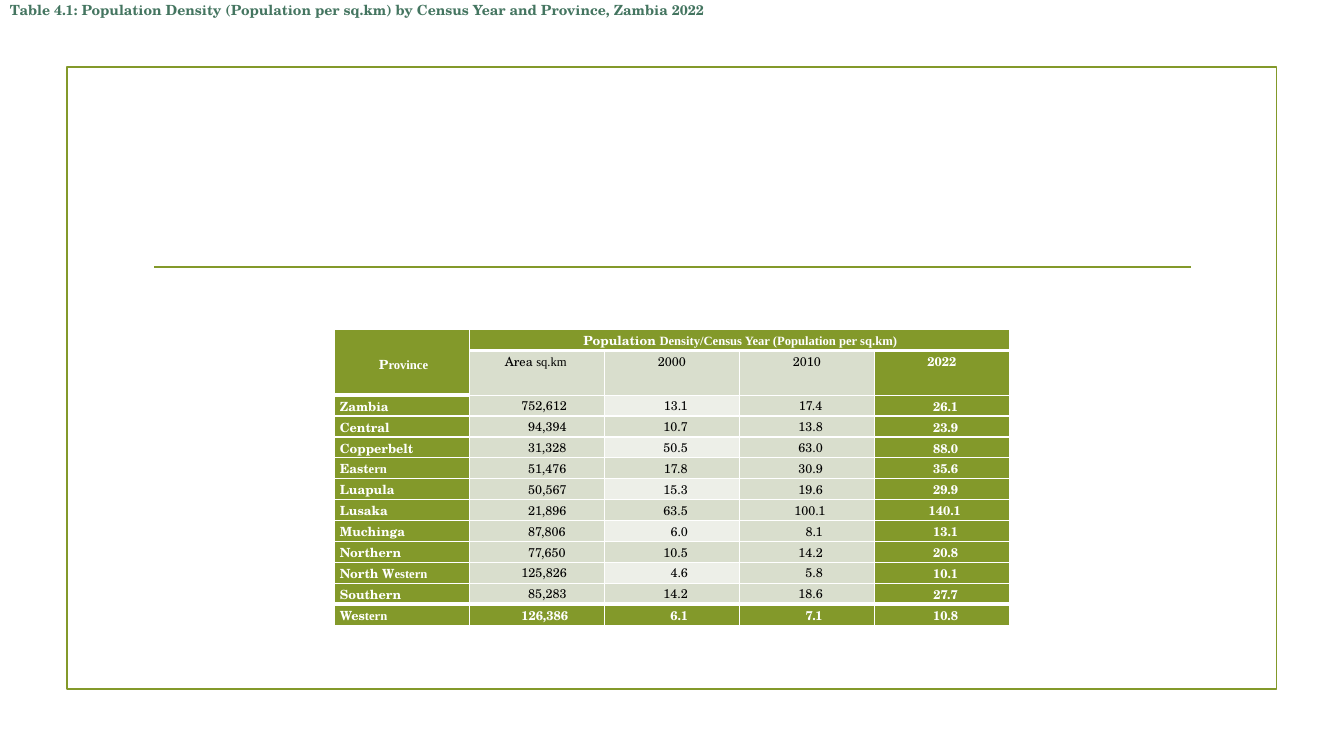
import pptx
import pptx.dml.color
import pptx.enum.shapes
import pptx.enum.text
import pptx.oxml
import pptx.oxml.ns
import pptx.util

Pt = pptx.util.Pt
COLORS = {"olive": "83992A", "sage": "D9DECD", "pale": "EDEFE8",
          "white": "FFFFFF", "black": "000000", "title": "447560"}
SERIF, TIMES = "TeX Gyre Schola", "Times New Roman"
CENTER = pptx.enum.text.PP_ALIGN.CENTER
LEFT = pptx.enum.text.PP_ALIGN.LEFT

HEADINGS = ["Area |sq.km", "2000", "2010", "2022"]
DENSITIES = [
    ["Zambia", "752,612", "13.1", "17.4", "26.1"],
    ["Central", "94,394", "10.7", "13.8", "23.9"],
    ["Copperbelt", "31,328", "50.5", "63.0", "88.0"],
    ["East|ern", "51,476", "17.8", "30.9", "35.6"],
    ["Luapula", "50,567", "15.3", "19.6", "29.9"],
    ["Lusaka", "21,896", "63.5", "100.1", "140.1"],
    ["Muchinga", "87,806", "6.0", "8.1", "13.1"],
    ["Northern", "77,650", "10.5", "14.2", "20.8"],
    ["North W|estern", "125,826", "4.6", "5.8", "10.1"],
    ["Southern", "85,283", "14.2", "18.6", "27.7"],
    ["Wes|tern", "126,386", "6.1", "7.1", "10.8"],
]
INDENT_BY_LENGTH = {3: 46, 4: 41, 5: 36.7, 6: 41.8, 7: 37}


class DensitySlide:
    """Holds the slide and its style, and draws each kind of element."""

    def __init__(self, deck):
        self.slide = deck.slides.add_slide(deck.slide_layouts[6])

    def color(self, name):
        return pptx.dml.color.RGBColor.from_string(COLORS[name])

    def style(self, font, size, color, bold):
        font.size, font.bold = Pt(size), bold
        font.color.rgb = self.color(color)

    def frame(self, left, top, width, height):
        border = self.slide.shapes.add_shape(
            pptx.enum.shapes.MSO_SHAPE.RECTANGLE,
            Pt(left), Pt(top), Pt(width), Pt(height))
        border.shadow.inherit = False
        border.fill.background()
        border.line.color.rgb = self.color("olive")
        border.line.width = Pt(1.25)

    def rule(self, left, right, y):
        divider = self.slide.shapes.add_connector(
            pptx.enum.shapes.MSO_CONNECTOR.STRAIGHT,
            Pt(left), Pt(y), Pt(right), Pt(y))
        divider.line.color.rgb = self.color("olive")
        divider.line.width = Pt(1.25)
        divider._element.spPr.append(
            pptx.oxml.parse_xml(f'<a:effectLst {pptx.oxml.ns.nsdecls("a")}/>'))

    def title(self, wording, left, top, width, height):
        caption = self.slide.shapes.add_textbox(
            Pt(left), Pt(top), Pt(width), Pt(height)).text_frame
        caption.word_wrap = True
        line = caption.paragraphs[0]
        line.text = wording
        line.font.name = SERIF
        self.style(line.font, 10, "title", True)

    def table(self, left, top, column_width, row_heights, columns):
        grid = self.slide.shapes.add_table(
            len(row_heights), columns, Pt(left), Pt(top),
            Pt(column_width * columns), Pt(sum(row_heights))).table
        grid.first_row = grid.horz_banding = False
        for column in grid.columns:
            column.width = Pt(column_width)
        for row, height in zip(grid.rows, row_heights):
            row.height = Pt(height)
        return grid

    def cell(self, cell, wording, fill, indent, right=0, align=LEFT,
             thick="", gap=0):
        cell.margin_left = cell.margin_right = cell.margin_bottom = 0
        cell.margin_top = Pt(gap)
        properties = cell._tc.get_or_add_tcPr()
        for side in "LRTB":
            weight = Pt(3 if side in thick else 1)
            properties.append(pptx.oxml.parse_xml(
                f'<a:ln{side} {pptx.oxml.ns.nsdecls("a")} w="{weight}"><a:solidFill>'
                f'<a:srgbClr val="{COLORS["white"]}"/></a:solidFill></a:ln{side}>'))
        cell.fill.solid()
        cell.fill.fore_color.rgb = self.color(fill)
        line = cell.text_frame.paragraphs[0]
        line.alignment, line.line_spacing = align, 1.07
        margins = line._p.get_or_add_pPr()
        margins.set("marL", str(Pt(indent)))
        margins.set("marR", str(Pt(right)))
        strong = fill == "olive"
        self.style(line.font, 9, "white" if strong else "black", strong)
        parts = wording.split("|")
        if len(parts) == 1:
            line.font.name = SERIF
        for part, face in zip(parts, (SERIF, TIMES)):
            run = line.add_run()
            run.text = part
            if len(parts) > 1:
                run.font.name = face


def fill_for(row, column, last_row):
    if column in (0, 4) or row == last_row:
        return "olive"
    return "pale" if column == 2 and row % 2 == 0 else "sage"


def main():
    deck = pptx.Presentation()
    deck.slide_width, deck.slide_height = Pt(960), Pt(540)
    page = DensitySlide(deck)
    page.frame(47.8, 48, 864, 444.2)
    page.rule(110.2, 850.6, 190.8)

    grid = page.table(239, 235.5, 96.4, [14.9, 31.8] + [14.9] * len(DENSITIES), 5)
    grid.cell(0, 0).merge(grid.cell(1, 0))
    grid.cell(0, 1).merge(grid.cell(0, 4))
    page.cell(grid.cell(0, 0), "P|rovince", "olive", 31.7, thick="B", gap=2.6)
    grid.cell(0, 0).vertical_anchor = pptx.enum.text.MSO_ANCHOR.MIDDLE
    page.cell(grid.cell(0, 1),
              "Population |Density/Census Year (Population per sq.km)",
              "olive", 81.4, thick="B")
    for column, heading in enumerate(HEADINGS, 1):
        indent, right, align = (25.2, 0, LEFT) if column == 1 else (36.7, 36.7, CENTER)
        page.cell(grid.cell(1, column), heading, fill_for(1, column, None),
                  indent, right, align, thick="T")

    last_row = len(DENSITIES) + 1
    for row, province in enumerate(DENSITIES, 2):
        for column, wording in enumerate(province):
            indent = INDENT_BY_LENGTH[len(wording)] if column else 3.8
            right = 0 if column < 2 else 32.4 if len(wording) == 5 else 35.5
            thick = ("T" if row == last_row or (row == 2 and column == 0)
                     else "B" if row == last_row - 1 else "")
            page.cell(grid.cell(row, column), wording,
                      fill_for(row, column, last_row), indent, right,
                      LEFT if column < 2 else CENTER, thick)

    page.title("Table 4.1: Population Density (Population per sq.km) by Census "
               "Year and Province, Zambia 2022", 0, -2.2, 556, 41)
    deck.save("out.pptx")


if __name__ == "__main__":
    main()
